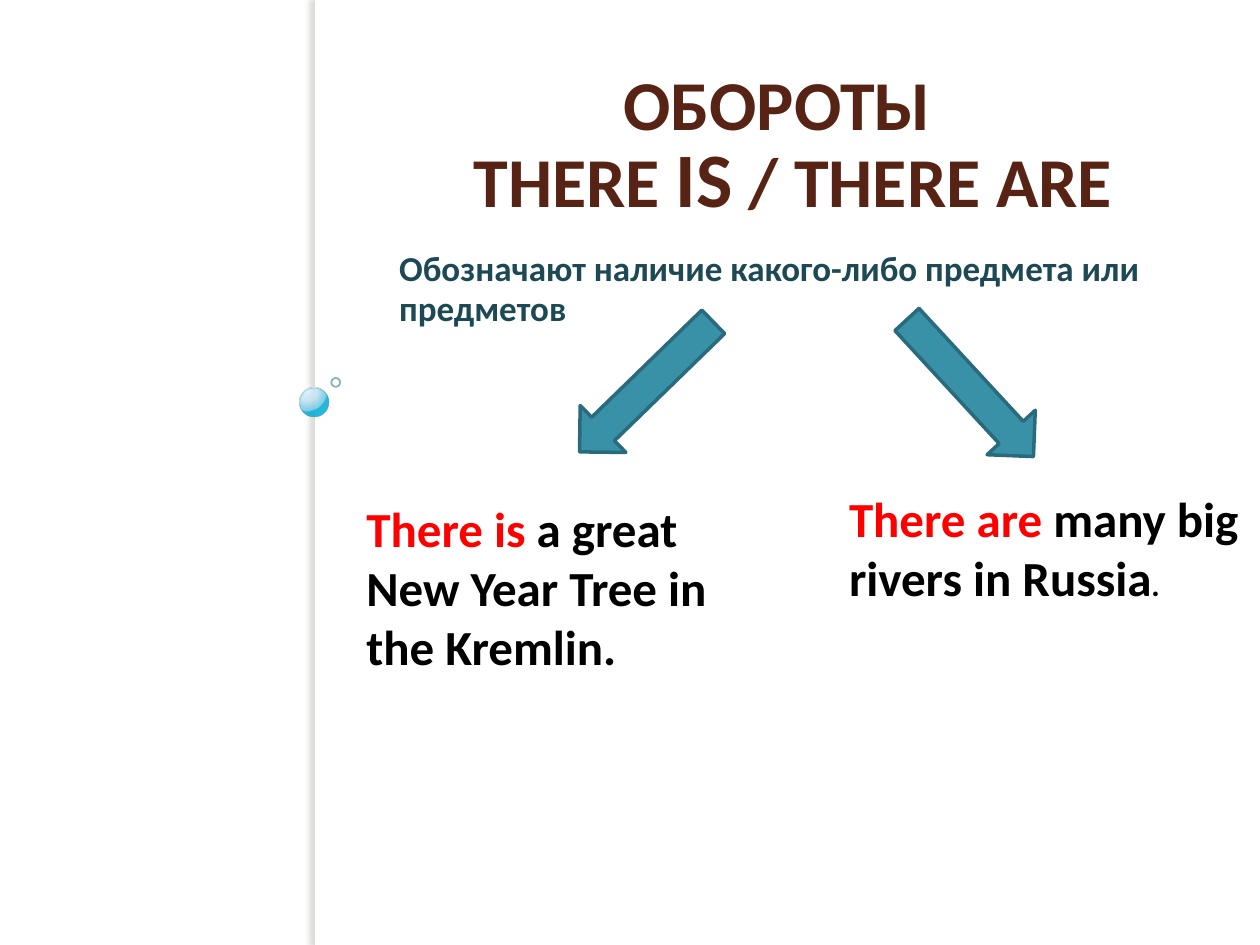
from typing import NamedTuple

from lxml import etree
from pptx import Presentation
from pptx.dml.color import RGBColor
from pptx.enum.shapes import MSO_SHAPE
from pptx.enum.text import MSO_ANCHOR, MSO_AUTO_SIZE, PP_ALIGN
from pptx.oxml import parse_xml
from pptx.oxml.ns import nsdecls, qn
from pptx.util import Inches, Pt

RECT, OVAL, ARROW = MSO_SHAPE.RECTANGLE, MSO_SHAPE.OVAL, MSO_SHAPE.RIGHT_ARROW
TOP, BOTTOM = MSO_ANCHOR.TOP, MSO_ANCHOR.BOTTOM
NO_FIT, GROW = MSO_AUTO_SIZE.NONE, MSO_AUTO_SIZE.SHAPE_TO_FIT_TEXT
CENTER = PP_ALIGN.CENTER
FONT = "Calibri"
COLORS = {
    "white": "FFFFFF", "black": "000000", "red": "FF0000",
    "brown": "572314", "navy": "1C4954", "teal": "3891A7",
    "edge": "296B7C", "rim": "308EA5", "ring": "318093", "shade": "736F63",
}
BALL_STOPS = [(0, "DAF4FF", 95), (50, "C3E3F0", 90), (95, "6BC7E8", 88), (100, "00ABD5", 85)]


class Box(NamedTuple):
    left: float
    top: float
    width: float
    height: float


class Arrow(NamedTuple):
    box: Box
    angle: float


class Span(NamedTuple):
    text: str
    color: str
    size: float


class Example(NamedTuple):
    box: Box
    spans: list[Span]


ARROWS = [
    Arrow(Box(6.96, 2.82, 1.48, 0.52), 47.3),
    Arrow(Box(4.39, 2.81, 1.48, 0.52), 135.8),
]
EXAMPLES = [
    Example(Box(2.81, 3.91, 3.28, 1.51), [
        Span("There is ", "red", 28),
        Span("a great New Year Tree in the Kremlin.", "black", 28),
    ]),
    Example(Box(6.64, 3.83, 3.36, 1.51), [
        Span("There are ", "red", 28),
        Span("many big rivers in Russia", "black", 28),
        Span(".", "black", 18),
    ]),
]


def rgb(name: str) -> RGBColor:
    return RGBColor.from_string(COLORS[name])


def place(shape, box: Box) -> None:
    shape.left, shape.top, shape.width, shape.height = map(Inches, box)


def add_shape(slide, kind, box: Box, fill: str = "", line: str = "", weight: float = 1):
    """Draw a flat shape; an empty colour name means none."""
    shape = slide.shapes.add_shape(kind, *map(Inches, box))
    shape.shadow.inherit = False
    if fill:
        shape.fill.solid()
        shape.fill.fore_color.rgb = rgb(fill)
    else:
        shape.fill.background()
    if line:
        shape.line.color.rgb = rgb(line)
        shape.line.width = Pt(weight)
    else:
        shape.line.fill.background()
    return shape


def fade_line(shape, percent: int) -> None:
    color = shape._element.spPr.find(qn("a:ln")).find(".//" + qn("a:srgbClr"))
    etree.SubElement(color, qn("a:alpha"), val=str(percent * 1000))


def cast_left(shape) -> None:
    """Give the shape a soft shadow to its left."""
    effects = shape._element.spPr.find(qn("a:effectLst"))
    effects.append(parse_xml(
        f'<a:outerShdw {nsdecls("a")} blurRad="{Pt(3)}" dist="{Pt(3)}" dir="10800000" '
        f'algn="tl" rotWithShape="0"><a:srgbClr val="{COLORS["shade"]}">'
        '<a:alpha val="25000"/></a:srgbClr></a:outerShdw>'))


def fill_ball(shape) -> None:
    """Swap the empty fill for a round gradient."""
    stops = "".join(
        f'<a:gs pos="{spot * 1000}"><a:srgbClr val="{color}">'
        f'<a:alpha val="{alpha * 1000}"/></a:srgbClr></a:gs>'
        for spot, color, alpha in BALL_STOPS)
    props = shape._element.spPr
    props.replace(props.find(qn("a:noFill")), parse_xml(
        f'<a:gradFill {nsdecls("a")} rotWithShape="1"><a:gsLst>{stops}</a:gsLst>'
        '<a:path path="circle"><a:fillToRect l="25000" t="12000" r="75000" b="88000"/>'
        '</a:path></a:gradFill>'))


def write(shape, spans: list[Span], anchor=TOP, fit=NO_FIT):
    """Fill one bold paragraph; a newline inside a span is a line break."""
    frame = shape.text_frame
    frame.word_wrap = True
    frame.auto_size = fit
    frame.vertical_anchor = anchor
    para = frame.paragraphs[0]
    para.font.name, para.font.bold = FONT, True
    for span in spans:
        for row, text in enumerate(span.text.split("\n")):
            if row:
                para.add_line_break()
            run = para.add_run()
            run.text = text
            run.font.size = Pt(span.size)
            run.font.color.rgb = rgb(span.color)
    return para


def add_text(slide, box: Box, spans: list[Span], anchor=TOP, fit=NO_FIT):
    return write(slide.shapes.add_textbox(*map(Inches, box)), spans, anchor, fit)


def add_side(slide) -> None:
    cast_left(add_shape(slide, RECT, Box(2.5, 0, 0.08, 7.5), "white"))
    ball = add_shape(slide, OVAL, Box(2.38, 3.08, 0.23, 0.23), line="rim", weight=0.16)
    fill_ball(ball)
    ring = add_shape(slide, OVAL, Box(2.63, 3, 0.07, 0.07), line="ring")
    for shape in (ball, ring):
        fade_line(shape, 60)


def main() -> None:
    deck = Presentation()
    deck.slide_width, deck.slide_height = Inches(10), Inches(7.5)
    slide = deck.slides.add_slide(deck.slide_layouts[5])
    add_side(slide)

    title = slide.shapes.title
    place(title, Box(2.73, 0.47, 7, 1.8))
    para = write(title, [
        Span("ОБОРОТЫ \n THERE ", "brown", 40),
        Span("IS", "brown", 44),
        Span(" / THERE ARE", "brown", 40),
    ])
    para.alignment, para.line_spacing = CENTER, Pt(45)

    note = Span("Обозначают наличие какого-либо предмета или предметов", "navy", 20)
    para = add_text(slide, Box(3.07, 1.87, 6.7, 0.79), [note], BOTTOM)
    para.line_spacing = Pt(23)

    for arrow in ARROWS:
        shape = add_shape(slide, ARROW, arrow.box, "teal", "edge", 2)
        shape.rotation = arrow.angle
    for item in EXAMPLES:
        add_text(slide, item.box, item.spans, fit=GROW)
    deck.save("out.pptx")


if __name__ == "__main__":
    main()
